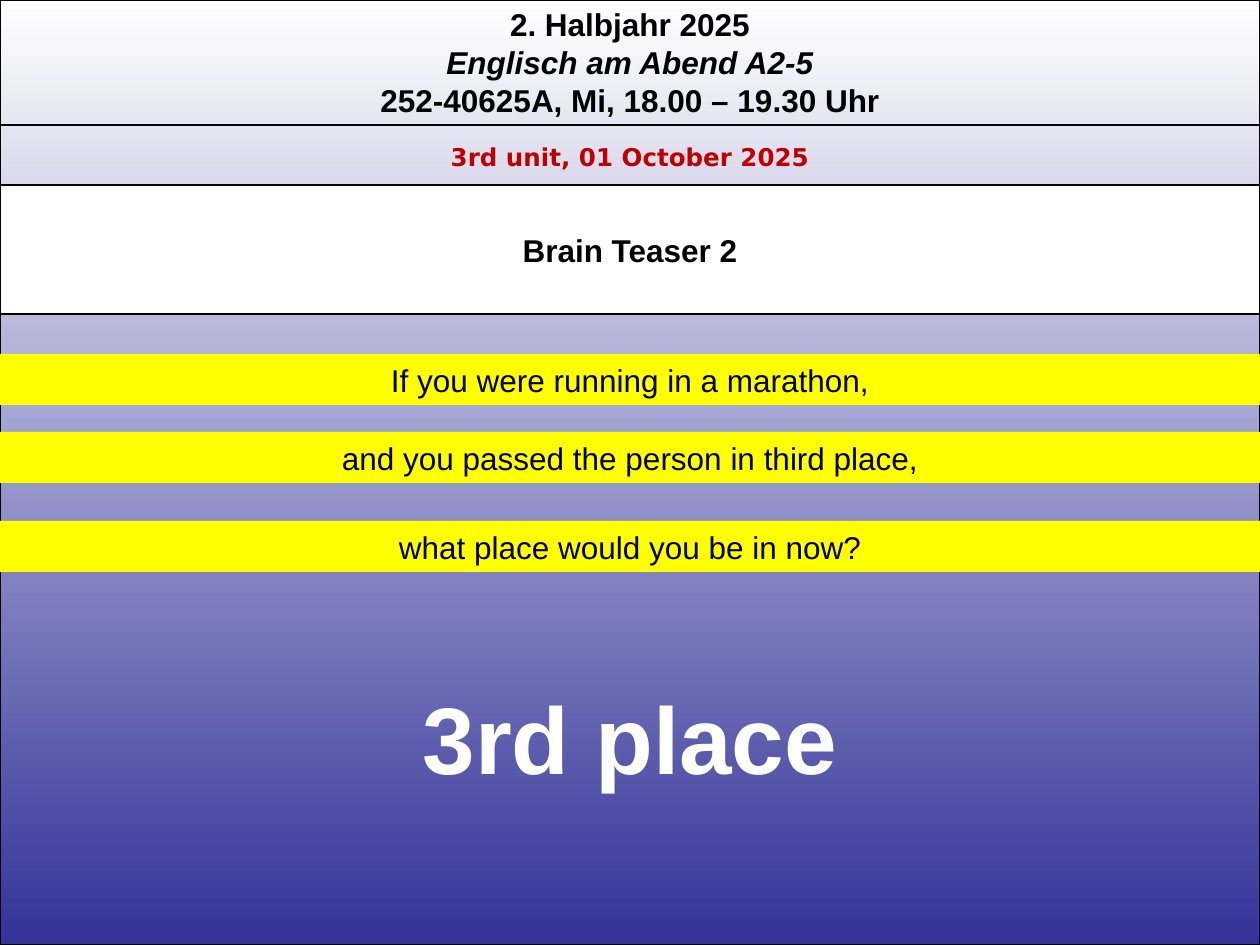
from pptx import Presentation
from pptx.dml.color import RGBColor
from pptx.enum.shapes import MSO_CONNECTOR, MSO_SHAPE
from pptx.enum.text import MSO_ANCHOR, PP_ALIGN
from pptx.util import Pt
from lxml import etree

SCALE = 914400 / 126
W, H = 1260, 945
COLORS = {
    "white": "FFFFFF",
    "black": "000000",
    "indigo": "333399",
    "yellow": "FFFF00",
    "red": "C00000",
}


def px(n):
    return round(n * SCALE)


def rgb(name):
    return RGBColor.from_string(COLORS[name])


def write(sp, lines, size=18, color="black", font="Arial", bold=False, wrap=True):
    """Fill a shape with centred lines given as (text, italic) pairs."""
    tf = sp.text_frame
    tf.word_wrap = wrap
    tf.vertical_anchor = MSO_ANCHOR.MIDDLE
    for i, (text, italic) in enumerate(lines):
        p = tf.paragraphs[0] if i == 0 else tf.add_paragraph()
        p.alignment = PP_ALIGN.CENTER
        r = p.add_run()
        r.text = text
        r.font.name = font
        r.font.size = Pt(size)
        r.font.bold = bold
        r.font.italic = italic
        r.font.color.rgb = rgb(color)


def add_text(s, x, y, w, h, lines, **style):
    sp = s.shapes.add_textbox(px(x), px(y), px(w), px(h))
    write(sp, lines, **style)


def add_rect(s, x, y, w, h, fill=None, line=None):
    sp = s.shapes.add_shape(MSO_SHAPE.RECTANGLE, px(x), px(y), px(w), px(h))
    sp.shadow.inherit = False
    if fill:
        sp.fill.solid()
        sp.fill.fore_color.rgb = rgb(fill)
    if line:
        sp.line.color.rgb = rgb(line)
        sp.line.width = Pt(0.75)
    else:
        sp.line.fill.background()
    return sp


def add_background(s, x, y, w, h):
    sp = add_rect(s, x, y, w, h, line="black")
    sp.fill.gradient()
    sp.fill.gradient_angle = 270
    for stop, name, position in zip(sp.fill.gradient_stops, ("white", "indigo"), (0, 1)):
        stop.color.rgb = rgb(name)
        stop.position = position


def add_header(s, x, y, w, h):
    # Course details
    lines = [
        ("2. Halbjahr 2025", False),
        ("Englisch am Abend A2-5", True),
        ("252-40625A, Mi, 18.00 – 19.30 Uhr", False),
    ]
    add_text(s, x, y - 1, w, 126, lines, bold=True)
    # Divider
    rule = s.shapes.add_connector(
        MSO_CONNECTOR.STRAIGHT, px(x), px(y + 125), px(x + w), px(y + 125))
    rule.line.color.rgb = rgb("black")
    rule.line.width = Pt(0.75)
    etree.SubElement(
        rule._element.spPr,
        "{http://schemas.openxmlformats.org/drawingml/2006/main}effectLst")
    # Unit and date
    add_text(s, x, y + 135, w, h - 142, [("3rd unit, 01 October 2025", False)],
             size=14, color="red", font="DejaVu Sans", bold=True)


def add_title(s, x, y, w, h):
    sp = add_rect(s, x, y, w, h, fill="white", line="black")
    write(sp, [("Brain Teaser 2", False)], bold=True)


def add_riddle(s, x, y, w, h):
    # Question bars
    bars = [
        (40, "If you were running in a marathon,"),
        (118, "and you passed the person in third place,"),
        (207, "what place would you be in now?"),
    ]
    for top, text in bars:
        sp = add_rect(s, x, y + top, w, 51, fill="yellow")
        write(sp, [(text, False)])
    # Answer
    answer_w = 444
    add_text(s, x + (w - answer_w) // 2, y + 359, answer_w, 127,
             [("3rd place", False)], size=54, color="white", bold=True, wrap=False)


def main():
    prs = Presentation()
    prs.slide_width, prs.slide_height = px(W), px(H)
    s = prs.slides.add_slide(prs.slide_layouts[6])
    add_background(s, 0, 0, W, H)
    add_header(s, 0, 0, W, 185)
    add_title(s, 0, 185, W, 129)
    add_riddle(s, 0, 314, W, H - 314)
    prs.save("out.pptx")


if __name__ == "__main__":
    main()
